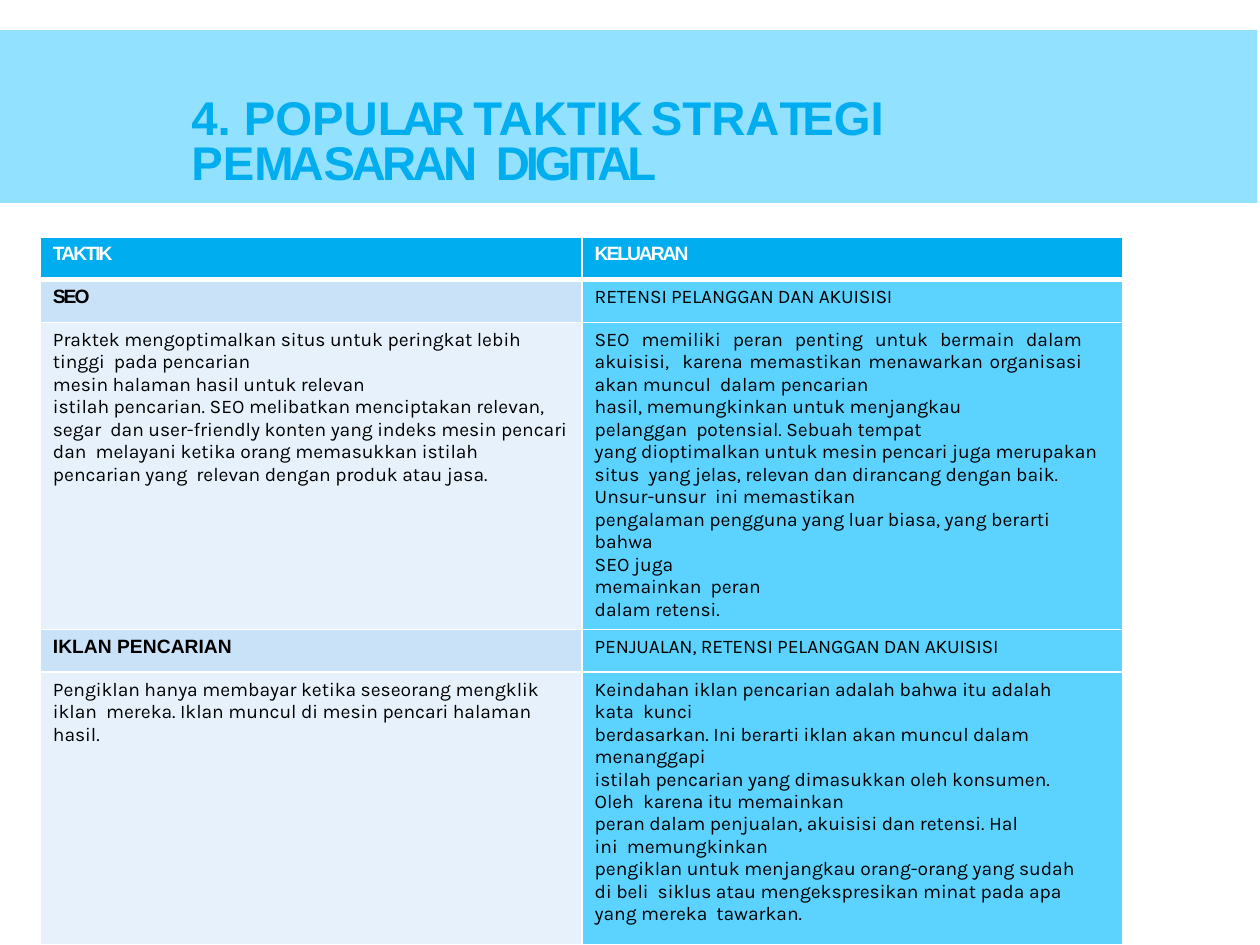
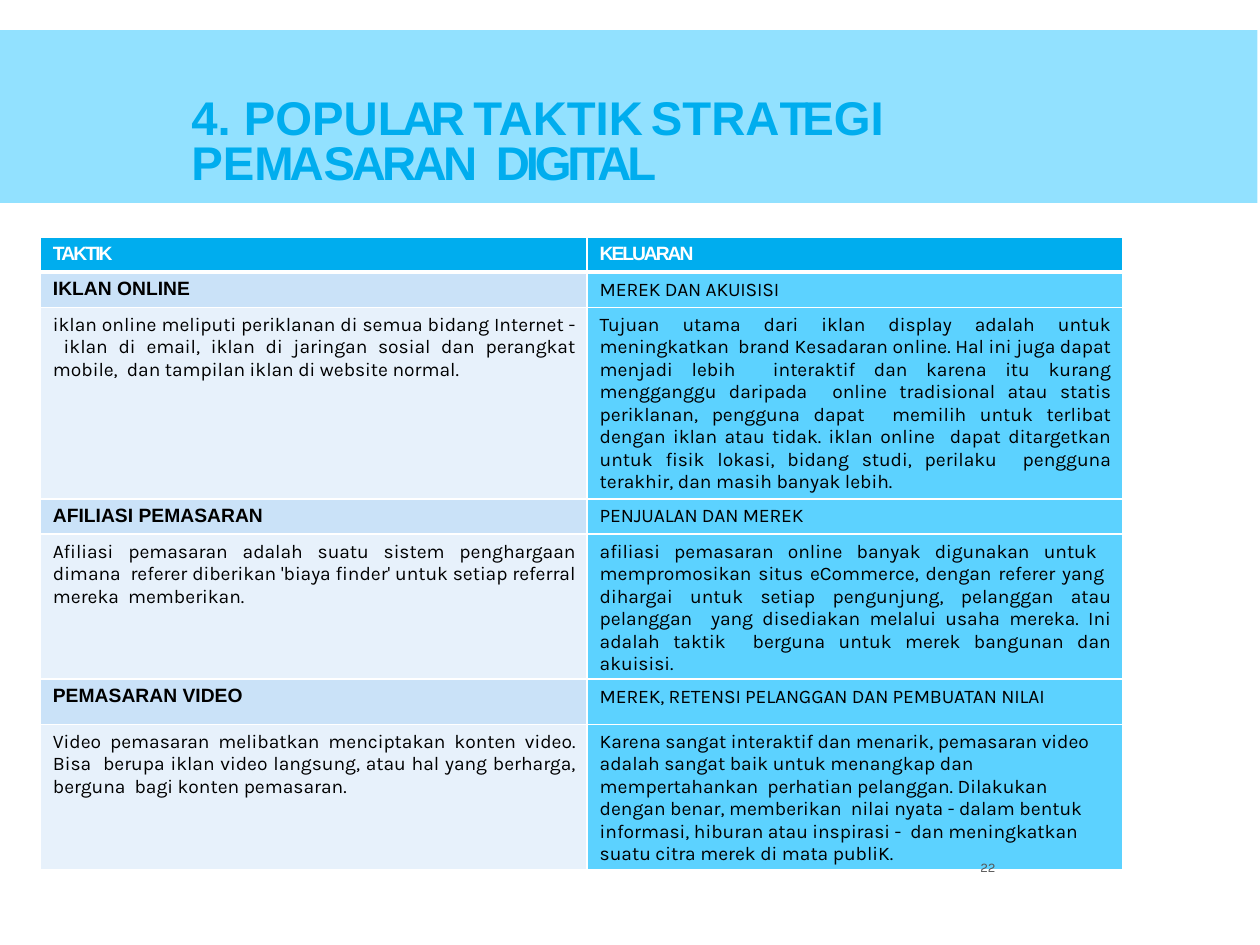
"""Build two slides of digital marketing tactics and their outcomes."""
from lxml import etree
from pptx import Presentation
from pptx.dml.color import RGBColor
from pptx.enum.shapes import MSO_SHAPE
from pptx.enum.text import PP_ALIGN
from pptx.oxml.ns import qn
from pptx.util import Inches, Pt

LEFT, JUSTIFY = PP_ALIGN.LEFT, PP_ALIGN.JUSTIFY
RECTANGLE = MSO_SHAPE.RECTANGLE

WHITE = RGBColor(0xFF, 0xFF, 0xFF)
BLACK = RGBColor(0, 0, 0)
GREY = RGBColor(0x58, 0x58, 0x58)
BAND = RGBColor(0x92, 0xE1, 0xFF)
ACCENT = RGBColor(0x00, 0xAD, 0xEE)
TACTIC_NAME = RGBColor(0xCA, 0xE2, 0xF8)
TACTIC_DETAIL = RGBColor(0xE7, 0xF1, 0xFB)
OUTCOME = RGBColor(0x5C, 0xD2, 0xFF)

HEADING_FONT, BODY_FONT = "Arial", "Karla"
TABLE_LEFT, TABLE_TOP = 0.32, 1.88
EDGE = 0.09

TITLE = [
    ("4. POPU", 0), ("LAR ", -2.8), ("TAKTI", 0), ("K ", -3), ("STRA", 0),
    ("TE", -3.4), ("GI PE", 0), ("MA", -2.4), ("SARAN  ", -2.1), ("DIGITAL", -2.4),
]
HEADINGS = [("TAKTIK", -1.1), ("KELUARAN", -1.2)]

SLIDES = [
    {
        "columns": [4.3, 4.29],
        "rows": [0.34, 0.34, 2.43, 0.34, 2.16],
        "page": None,
        "tactics": [
            {
                "name": ("SEO", -1.2),
                "outcome": "RETENSI PELANGGAN DAN AKUISISI",
                "detail": [
                    ("Praktek mengoptimalkan situs untuk peringkat lebih tinggi  pada pencarian", EDGE, LEFT),
                    ("mesin halaman hasil untuk relevan", EDGE, LEFT),
                    ("istilah pencarian. SEO melibatkan menciptakan relevan, segar  dan user-friendly "
                     "konten yang indeks mesin pencari dan  melayani ketika orang memasukkan istilah "
                     "pencarian yang  relevan dengan produk atau jasa.", EDGE, LEFT),
                ],
                "effect": [
                    ("SEO memiliki peran penting untuk bermain dalam akuisisi,  karena memastikan "
                     "menawarkan organisasi akan muncul  dalam pencarian", 0.32, JUSTIFY),
                    ("hasil, memungkinkan untuk menjangkau pelanggan  potensial. Sebuah tempat", 0.97, LEFT),
                    ("yang dioptimalkan untuk mesin pencari juga merupakan situs  yang jelas, relevan "
                     "dan dirancang dengan baik. Unsur-unsur  ini memastikan", 0.1, LEFT),
                    ("pengalaman pengguna yang luar biasa, yang berarti bahwa", 0.3, LEFT),
                    ("SEO juga memainkan  peran dalam retensi.", 2.79, LEFT),
                ],
            },
            {
                "name": ("IKLAN PENCARIAN", 0),
                "outcome": "PENJUALAN, RETENSI PELANGGAN DAN AKUISISI",
                "detail": [
                    ("Pengiklan hanya membayar ketika seseorang mengklik iklan  mereka. Iklan muncul "
                     "di mesin pencari halaman hasil.", 0.15, LEFT),
                ],
                "effect": [
                    ("Keindahan iklan pencarian adalah bahwa itu adalah kata  kunci", 0.4, LEFT),
                    ("berdasarkan. Ini berarti iklan akan muncul dalam", EDGE, LEFT),
                    ("menanggapi", EDGE, LEFT),
                    ("istilah pencarian yang dimasukkan oleh konsumen. Oleh  karena itu memainkan", 0.4, LEFT),
                    ("peran dalam penjualan, akuisisi dan retensi. Hal ini  memungkinkan", 0.7, LEFT),
                    ("pengiklan untuk menjangkau orang-orang yang sudah di beli  siklus atau "
                     "mengekspresikan minat pada apa yang mereka  tawarkan.", 0.3, LEFT),
                ],
            },
        ],
    },
    {
        "columns": [4.34, 4.25],
        "rows": [0.28, 0.28, 1.52, 0.28, 1.15, 0.36, 1.14],
        "page": "22",
        "tactics": [
            {
                "name": ("IKLAN ONLINE", 0),
                "outcome": "MEREK DAN AKUISISI",
                "detail": [
                    ("iklan online meliputi periklanan di semua bidang Internet -  iklan di email, "
                     "iklan di jaringan sosial dan perangkat mobile,  dan tampilan iklan di website "
                     "normal.", EDGE, JUSTIFY),
                ],
                "effect": [
                    ("Tujuan utama dari iklan display adalah untuk meningkatkan  brand Kesadaran "
                     "online. Hal ini juga dapat menjadi lebih  interaktif dan karena itu kurang "
                     "mengganggu daripada  online tradisional atau statis periklanan, pengguna dapat  "
                     "memilih untuk terlibat dengan iklan atau tidak. iklan online  dapat ditargetkan "
                     "untuk fisik lokasi, bidang studi, perilaku  pengguna terakhir, dan masih banyak "
                     "lebih.", EDGE, JUSTIFY),
                ],
            },
            {
                "name": ("AFILIASI PEMASARAN", 0),
                "outcome": "PENJUALAN DAN MEREK",
                "detail": [
                    ("Afiliasi pemasaran adalah suatu sistem penghargaan dimana  referer diberikan "
                     "'biaya finder' untuk setiap referral mereka  memberikan.", EDGE, JUSTIFY),
                ],
                "effect": [
                    ("afiliasi pemasaran online banyak digunakan untuk  mempromosikan situs eCommerce, "
                     "dengan referer yang  dihargai untuk setiap pengunjung, pelanggan atau pelanggan  "
                     "yang disediakan melalui usaha mereka. Ini adalah taktik  berguna untuk merek "
                     "bangunan dan akuisisi.", EDGE, JUSTIFY),
                ],
            },
            {
                "name": ("PEMASARAN VIDEO", 0),
                "outcome": "MEREK, RETENSI PELANGGAN DAN PEMBUATAN NILAI",
                "detail": [
                    ("Video pemasaran melibatkan menciptakan konten video. Bisa  berupa iklan video "
                     "langsung, atau hal yang berharga, berguna  bagi konten pemasaran.", EDGE, JUSTIFY),
                ],
                "effect": [
                    ("Karena sangat interaktif dan menarik, pemasaran video  adalah sangat baik untuk "
                     "menangkap dan mempertahankan  perhatian pelanggan. Dilakukan dengan benar, "
                     "memberikan  nilai nyata - dalam bentuk informasi, hiburan atau inspirasi -  dan "
                     "meningkatkan suatu citra merek di mata publiK.", EDGE, LEFT),
                ],
            },
        ],
    },
]


def style_run(run, font, size, color, bold=False, spacing=0):
    run.font.name = font
    run.font.size = Pt(size)
    run.font.bold = bold
    run.font.color.rgb = color
    run._r.get_or_add_rPr().set("spc", str(round(spacing * 100)))


def add_text_frame(slide, left, top, width, height, inset_left, inset_top):
    frame = slide.shapes.add_textbox(*map(Inches, (left, top, width, height))).text_frame
    frame.word_wrap = True
    frame.margin_left, frame.margin_top = Inches(inset_left), Inches(inset_top)
    frame.margin_right = frame.margin_bottom = 0
    return frame


def add_title_band(slide):
    band = slide.shapes.add_shape(RECTANGLE, 0, Inches(0.24), Inches(9.98), Inches(1.37))
    band.shadow.inherit = False
    band.fill.solid()
    band.fill.fore_color.rgb = BAND
    band.line.fill.background()
    title = add_text_frame(slide, 1.51, 0.69, 7.1, 0.84, 0.01, 0.1).paragraphs[0]
    title.line_spacing = Pt(25.9)
    for text, spacing in TITLE:
        run = title.add_run()
        run.text = text
        style_run(run, HEADING_FONT, 27, ACCENT, True, spacing)


def add_page_number(slide, number):
    frame = add_text_frame(slide, 7.74, 6.81, 0.21, 0.15, 0.04, 0.01)
    frame.text = number
    style_run(frame.paragraphs[0].runs[0], BODY_FONT, 7.5, GREY)


def set_borders(cell, top, bottom):
    properties = cell._tc.get_or_add_tcPr()
    for side, width in (("lnL", 1), ("lnR", 1), ("lnT", top), ("lnB", bottom)):
        border = etree.SubElement(properties, qn("a:" + side), w=str(Pt(width)))
        fill = etree.SubElement(border, qn("a:solidFill"))
        etree.SubElement(fill, qn("a:srgbClr"), val=str(WHITE))


def fill_cell(cell, paragraphs, background, font, color, bold=False, spacing=-0.03):
    cell.margin_left = cell.margin_right = cell.margin_bottom = 0
    cell.margin_top = Inches(0.05)
    cell.fill.solid()
    cell.fill.fore_color.rgb = background
    cell.text_frame.text = "\n".join(text for text, _, _ in paragraphs)
    for paragraph, (_, right, align) in zip(cell.text_frame.paragraphs, paragraphs):
        paragraph.alignment = align
        indents = paragraph._p.get_or_add_pPr()
        indents.set("marL", str(Inches(0.1)))
        indents.set("marR", str(Inches(right)))
        style_run(paragraph.runs[0], font, 11, color, bold, spacing)


def add_tactics_table(slide, content):
    columns, rows = content["columns"], content["rows"]
    table = slide.shapes.add_table(
        len(rows), len(columns), Inches(TABLE_LEFT), Inches(TABLE_TOP),
        Inches(sum(columns)), Inches(sum(rows))).table
    table.horz_banding = False
    for column, width in zip(table.columns, columns):
        column.width = Inches(width)
    for index, (row, height) in enumerate(zip(table.rows, rows)):
        row.height = Inches(height)
        for cell in row.cells:
            set_borders(cell, 3 if index == 1 else 1, 3 if index == 0 else 1)

    for column, (heading, spacing) in enumerate(HEADINGS):
        fill_cell(table.cell(0, column), [(heading, 0, LEFT)], ACCENT,
                  HEADING_FONT, WHITE, True, spacing)
    for index, tactic in enumerate(content["tactics"]):
        name_row = 1 + 2 * index
        name, spacing = tactic["name"]
        fill_cell(table.cell(name_row, 0), [(name, 0, LEFT)], TACTIC_NAME,
                  HEADING_FONT, BLACK, True, spacing)
        fill_cell(table.cell(name_row, 1), [(tactic["outcome"], 0, LEFT)], OUTCOME,
                  BODY_FONT, BLACK, spacing=-0.1)
        fill_cell(table.cell(name_row + 1, 0), tactic["detail"], TACTIC_DETAIL, BODY_FONT, BLACK)
        fill_cell(table.cell(name_row + 1, 1), tactic["effect"], OUTCOME, BODY_FONT, BLACK)


def main():
    deck = Presentation()
    deck.slide_width, deck.slide_height = Inches(10), Inches(7.5)
    blank = deck.slide_layouts[6]
    for content in SLIDES:
        slide = deck.slides.add_slide(blank)
        add_title_band(slide)
        add_tactics_table(slide, content)
        if content["page"]:
            add_page_number(slide, content["page"])
    deck.save("out.pptx")


if __name__ == "__main__":
    main()
